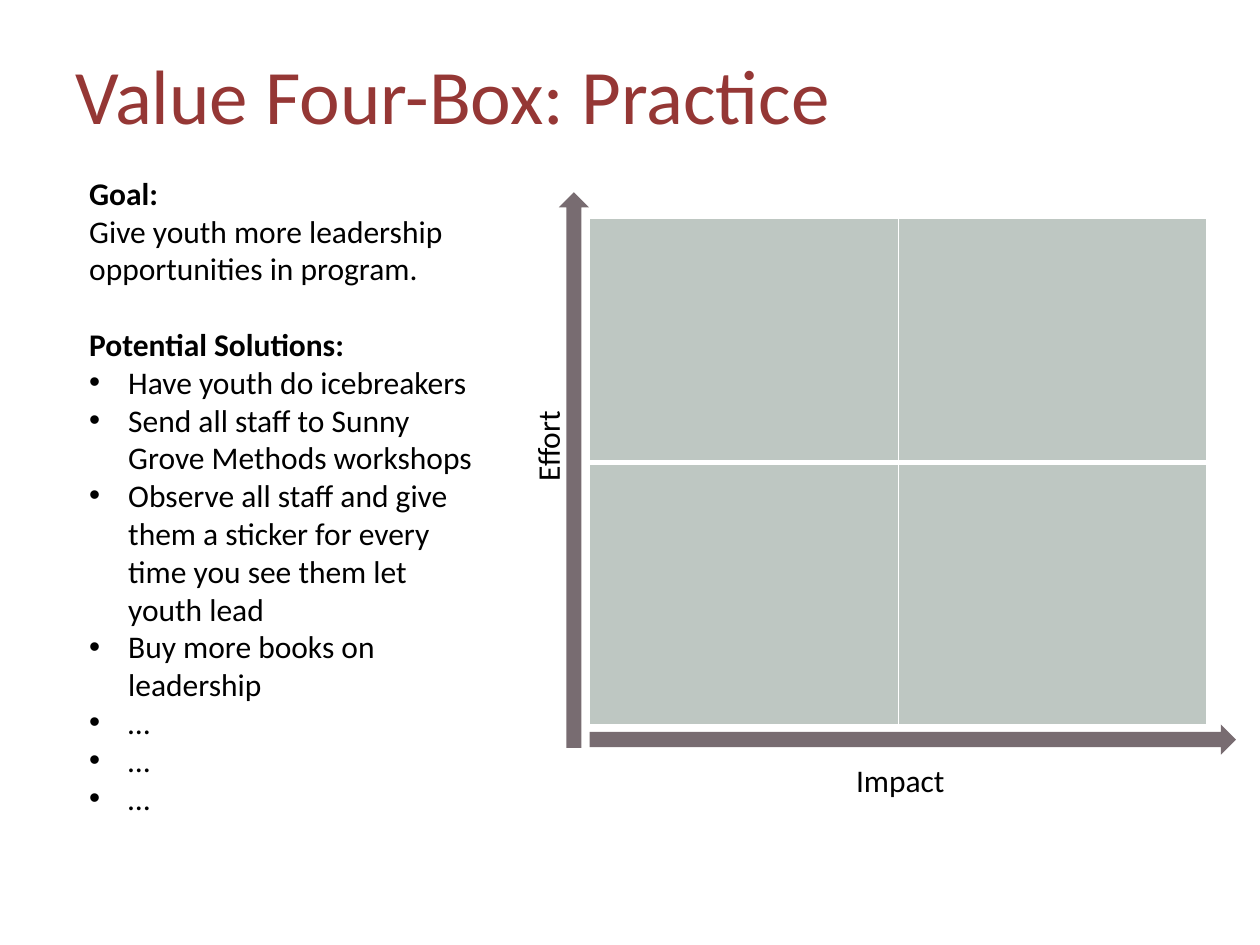
from dataclasses import dataclass

from lxml.etree import SubElement
from pptx import Presentation
from pptx.dml.color import RGBColor
from pptx.enum.shapes import MSO_SHAPE as Shape
from pptx.enum.text import MSO_ANCHOR as Anchor, MSO_AUTO_SIZE as Fit, PP_ALIGN as Align
from pptx.oxml import parse_xml
from pptx.oxml.ns import nsdecls, qn
from pptx.util import Inches, Pt

COLORS = {"title": "953735", "text": "000000", "cell": "BEC7C2",
          "axis": "786C71", "line": "FFFFFF"}
FONT = "Calibri"
INDENT = 0.31


@dataclass
class Box:
    left: float
    top: float
    width: float
    height: float
    turn: float = 0

    def place(self) -> tuple:
        return tuple(Inches(v) for v in (self.left, self.top, self.width, self.height))


@dataclass
class Line:
    text: str
    bold: bool = False
    bullet: bool = False
    before: float = 0


@dataclass
class Axis:
    name: str
    arrow: Box
    label: Box


GRID = Box(4.68, 1.73, 4.9, 4.02)
ROWS = (1.94, 2.08)
AXES = [
    Axis("Impact", Box(4.68, 5.75, 5.13, 0.24), Box(6.04, 5.99, 2.21, 0.4)),
    Axis("Effort", Box(2.35, 3.61, 4.41, 0.24, 270), Box(3.24, 3.34, 2.21, 0.4, 270)),
]
IDEAS = [
    "Have youth do icebreakers",
    "Send all staff to Sunny Grove Methods workshops",
    "Observe all staff and give them a sticker for every time you see them let youth lead",
    "Buy more books on leadership",
    "…", "…", "…",
]
LINES = [
    Line("Goal:", bold=True),
    Line("Give youth more leadership opportunities in program."),
    Line("Potential Solutions:", bold=True, before=21.6),
    *(Line(idea, bullet=True) for idea in IDEAS),
]


def color(key: str) -> RGBColor:
    return RGBColor.from_string(COLORS[key])


def style(para, size: float, key: str, bold: bool = False) -> None:
    for run in para.runs:
        run.font.name = FONT
        run.font.size = Pt(size)
        run.font.bold = bold
        run.font.color.rgb = color(key)


def add_bullet(para) -> None:
    props = para._p.get_or_add_pPr()
    props.set("marL", str(Inches(INDENT)))
    props.set("indent", str(-Inches(INDENT)))
    SubElement(props, qn("a:buFont")).set("typeface", "Arial")
    SubElement(props, qn("a:buChar")).set("char", "•")


def add_text(slide, box: Box, lines: list[Line], align=Align.LEFT) -> None:
    shape = slide.shapes.add_textbox(*box.place())
    shape.rotation = box.turn
    frame = shape.text_frame
    frame.word_wrap = True
    frame.auto_size = Fit.SHAPE_TO_FIT_TEXT
    frame.text = "\n".join(line.text for line in lines)
    for para, line in zip(frame.paragraphs, lines):
        para.alignment = align
        para.space_before = Pt(line.before)
        style(para, 18, "text", line.bold)
        if line.bullet:
            add_bullet(para)


def add_borders(cell, widths: dict[str, float]) -> None:
    """Draw cell borders; widths maps side letters, in L R T B order, to points."""
    props = cell._tc.get_or_add_tcPr()
    for spot, (side, width) in enumerate(widths.items()):
        props.insert(spot, parse_xml(
            f'<a:ln{side} {nsdecls("a")} w="{Pt(width)}"><a:solidFill>'
            f'<a:srgbClr val="{COLORS["line"]}"/></a:solidFill></a:ln{side}>'))


def add_grid(slide) -> None:
    table = slide.shapes.add_table(len(ROWS), 2, *GRID.place()).table
    for col in table.columns:
        col.width = Inches(GRID.width / 2)
    for r, height in enumerate(ROWS):
        table.rows[r].height = Inches(height)
        for cell in table.rows[r].cells:
            cell.fill.solid()
            cell.fill.fore_color.rgb = color("cell")
            add_borders(cell, {"L": 1, "R": 1, "T": 3 if r else 1, "B": 1 if r else 3})


def add_arrow(slide, box: Box) -> None:
    arrow = slide.shapes.add_shape(Shape.RIGHT_ARROW, *box.place())
    arrow.rotation = box.turn
    arrow.shadow.inherit = False
    arrow.fill.solid()
    arrow.fill.fore_color.rgb = color("axis")
    arrow.line.fill.background()


def set_title(slide, text: str) -> None:
    title = slide.shapes.title
    title.left, title.top, title.width, title.height = Box(0.5, 0.3, 9, 0.89).place()
    frame = title.text_frame
    frame.text = text
    frame.vertical_anchor = Anchor.MIDDLE
    frame.paragraphs[0].alignment = Align.LEFT
    style(frame.paragraphs[0], 44, "title")


def main() -> None:
    deck = Presentation()
    deck.slide_width, deck.slide_height = Inches(10), Inches(7.5)
    slide = deck.slides.add_slide(deck.slide_layouts[5])
    set_title(slide, "Value Four-Box: Practice")
    add_text(slide, Box(0.61, 1.33, 3.27, 5.55), LINES)
    add_grid(slide)
    for axis in AXES:
        add_arrow(slide, axis.arrow)
    for axis in AXES:
        add_text(slide, axis.label, [Line(axis.name)], Align.CENTER)
    deck.save("out.pptx")


if __name__ == "__main__":
    main()
